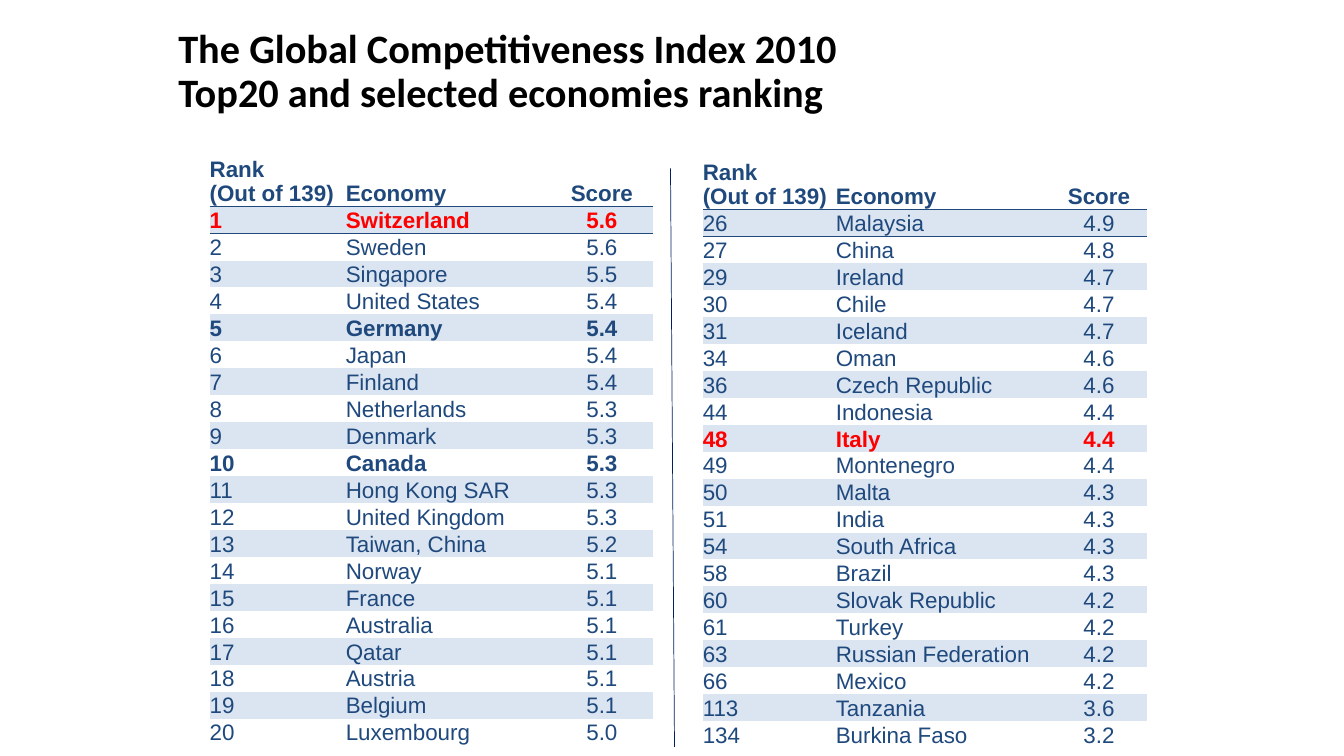
import pptx
import pptx.dml.color
import pptx.enum.shapes
import pptx.enum.text
import pptx.oxml
import pptx.oxml.ns
import pptx.oxml.xmlchemy
import pptx.util

Inches = pptx.util.Inches
Pt = pptx.util.Pt
RGBColor = pptx.dml.color.RGBColor
qn = pptx.oxml.ns.qn
PP_ALIGN = pptx.enum.text.PP_ALIGN
MSO_ANCHOR = pptx.enum.text.MSO_ANCHOR

BLACK = RGBColor(0x00, 0x00, 0x00)
WHITE = RGBColor(0xFF, 0xFF, 0xFF)
NAVY = RGBColor(0x00, 0x20, 0x60)
BLUE = RGBColor(0x1F, 0x49, 0x7D)
BAND = RGBColor(0xDB, 0xE5, 0xF1)
RED = RGBColor(0xFF, 0x00, 0x00)

NO_GRID_STYLE = "{2D5ABB26-0587-4C30-8999-92F81FD0307C}"
HEADER = ("Rank \v(Out of 139)", "Economy", "Score")
HIGHLIGHTED = {"Switzerland", "Italy"}
BOLD = {"Germany", "Canada"} | HIGHLIGHTED

TOP_20 = [
    ("1", "Switzerland", "5.6"),
    ("2", "Sweden", "5.6"),
    ("3", "Singapore", "5.5"),
    ("4", "United States", "5.4"),
    ("5", "Germany", "5.4"),
    ("6", "Japan", "5.4"),
    ("7", "Finland", "5.4"),
    ("8", "Netherlands", "5.3"),
    ("9", "Denmark", "5.3"),
    ("10", "Canada", "5.3"),
    ("11", "Hong Kong SAR", "5.3"),
    ("12", "United Kingdom", "5.3"),
    ("13", "Taiwan, China", "5.2"),
    ("14", "Norway", "5.1"),
    ("15", "France", "5.1"),
    ("16", "Australia", "5.1"),
    ("17", "Qatar", "5.1"),
    ("18", "Austria", "5.1"),
    ("19", "Belgium", "5.1"),
    ("20", "Luxembourg", "5.0"),
]
SELECTED = [
    ("26", "Malaysia", "4.9"),
    ("27", "China", "4.8"),
    ("29", "Ireland", "4.7"),
    ("30", "Chile", "4.7"),
    ("31", "Iceland", "4.7"),
    ("34", "Oman", "4.6"),
    ("36", "Czech Republic", "4.6"),
    ("44", "Indonesia", "4.4"),
    ("48", "Italy", "4.4"),
    ("49", "Montenegro", "4.4"),
    ("50", "Malta", "4.3"),
    ("51", "India", "4.3"),
    ("54", "South Africa", "4.3"),
    ("58", "Brazil", "4.3"),
    ("60", "Slovak Republic", "4.2"),
    ("61", "Turkey", "4.2"),
    ("63", "Russian Federation", "4.2"),
    ("66", "Mexico", "4.2"),
    ("113", "Tanzania", "3.6"),
    ("134", "Burkina Faso", "3.2"),
]


def format_runs(p, font, size, color, bold):
    for r in p.runs:
        r.font.name = font
        r.font.size = Pt(size)
        r.font.color.rgb = color
        r.font.bold = bold


def add_title(s, left, top, width, height):
    sp = s.shapes.add_textbox(Inches(left), Inches(top), Inches(width), Inches(height))
    tf = sp.text_frame
    tf.word_wrap = True
    tf.vertical_anchor = MSO_ANCHOR.MIDDLE
    tf.text = "The Global Competitiveness Index 2010 \vTop20 and selected economies ranking"
    p = tf.paragraphs[0]
    p.line_spacing = 0.9
    format_runs(p, "Calibri", 28.8, BLACK, True)


def add_divider(s, x1, y1, x2, y2):
    line = s.shapes.add_connector(
        pptx.enum.shapes.MSO_CONNECTOR.STRAIGHT,
        Inches(x1), Inches(y1), Inches(x2), Inches(y2))
    line.line.color.rgb = NAVY
    line.line.width = Pt(0.5)
    line.element.spPr.append(pptx.oxml.xmlchemy.OxmlElement("a:effectLst"))


def add_border(cell, side):
    cell._tc.get_or_add_tcPr().insert(0, pptx.oxml.parse_xml(
        f'<a:{side} {pptx.oxml.ns.nsdecls("a")} w="{Pt(1)}">'
        f'<a:solidFill><a:srgbClr val="{BLUE}"/></a:solidFill></a:{side}>'))


def fill_cell(cell, text, fill, color, bold, align):
    cell.margin_left = cell.margin_right = cell.margin_top = cell.margin_bottom = 0
    cell.vertical_anchor = MSO_ANCHOR.BOTTOM
    cell.fill.solid()
    cell.fill.fore_color.rgb = fill
    cell.text_frame.text = text
    p = cell.text_frame.paragraphs[0]
    p.alignment = align
    format_runs(p, "Arial", 16, color, bold)


def add_ranking(s, left, top, width, height, columns, header_height, economies):
    rows = [HEADER] + economies
    gf = s.shapes.add_table(len(rows), len(columns), Inches(left), Inches(top),
                            Inches(width), Inches(height))
    gf.element.find(".//" + qn("a:tableStyleId")).text = NO_GRID_STYLE
    table = gf.table
    table.first_row = table.horz_banding = False
    for column, column_width in zip(table.columns, columns):
        column.width = Inches(column_width)
    row_height = (height - header_height) / len(economies)
    for i, row in enumerate(rows):
        table.rows[i].height = Inches(row_height if i else header_height)
        name = row[1]
        for j, text in enumerate(row):
            cell = table.cell(i, j)
            fill_cell(cell, text,
                      fill=BAND if i % 2 else WHITE,
                      color=RED if name in HIGHLIGHTED else BLUE,
                      bold=i == 0 or name in BOLD,
                      align=PP_ALIGN.CENTER if j == 2 else PP_ALIGN.LEFT)
            if i < 2:
                add_border(cell, "lnT" if i else "lnB")


def main():
    prs = pptx.Presentation()
    prs.slide_width = Inches(13.33)
    prs.slide_height = Inches(7.5)
    s = prs.slides.add_slide(prs.slide_layouts[6])
    add_divider(s, 6.65, 1.67, 6.69, 7.41)
    add_title(s, 1.67, 0.21, 10, 1.02)
    add_ranking(s, 2.08, 1.5, 4.41, 5.9, (1.35, 2.03, 1.02), 0.55, TOP_20)
    add_ranking(s, 6.97, 1.5, 4.41, 5.91, (1.32, 2.13, 0.96), 0.58, SELECTED)
    prs.save("out.pptx")


if __name__ == "__main__":
    main()
